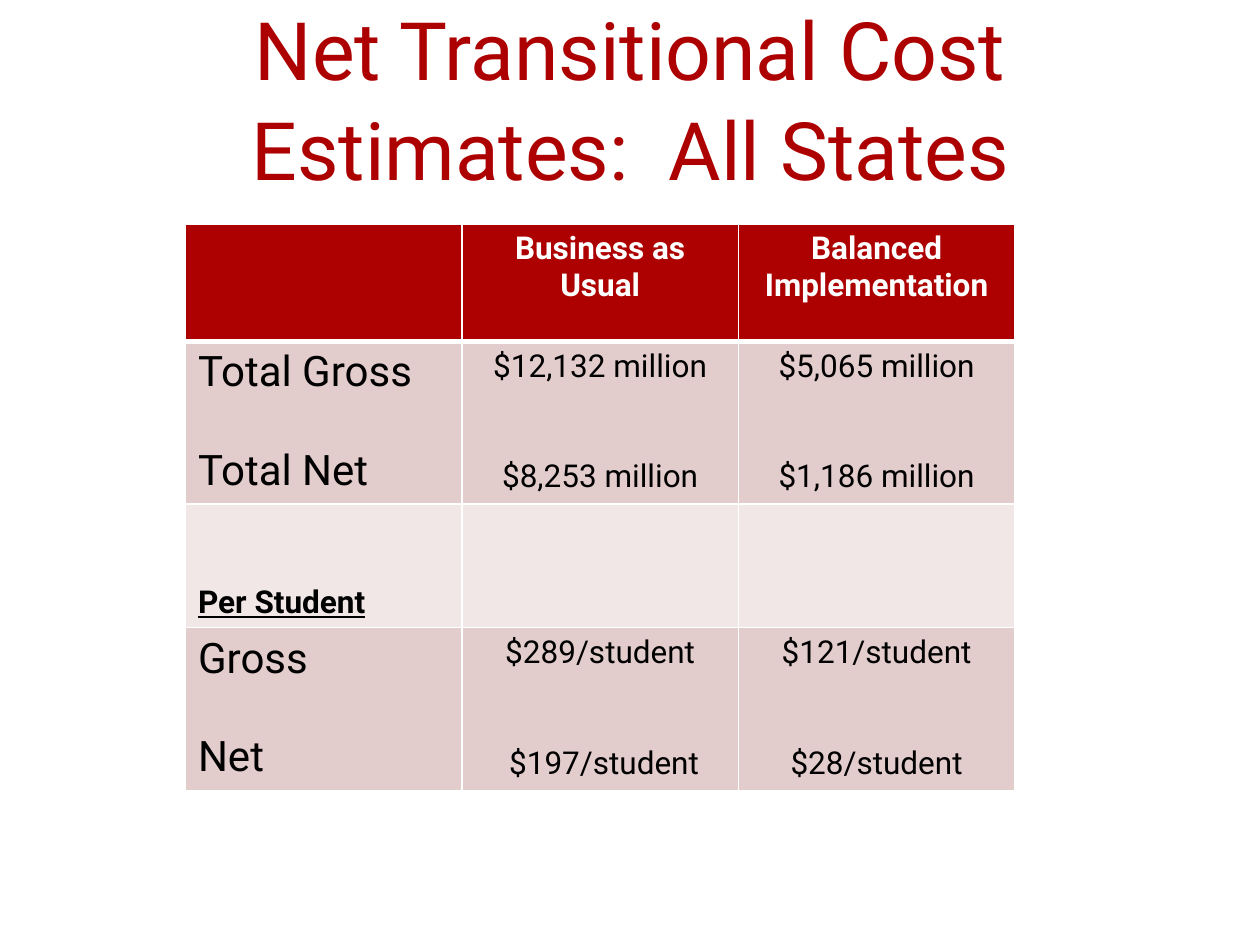
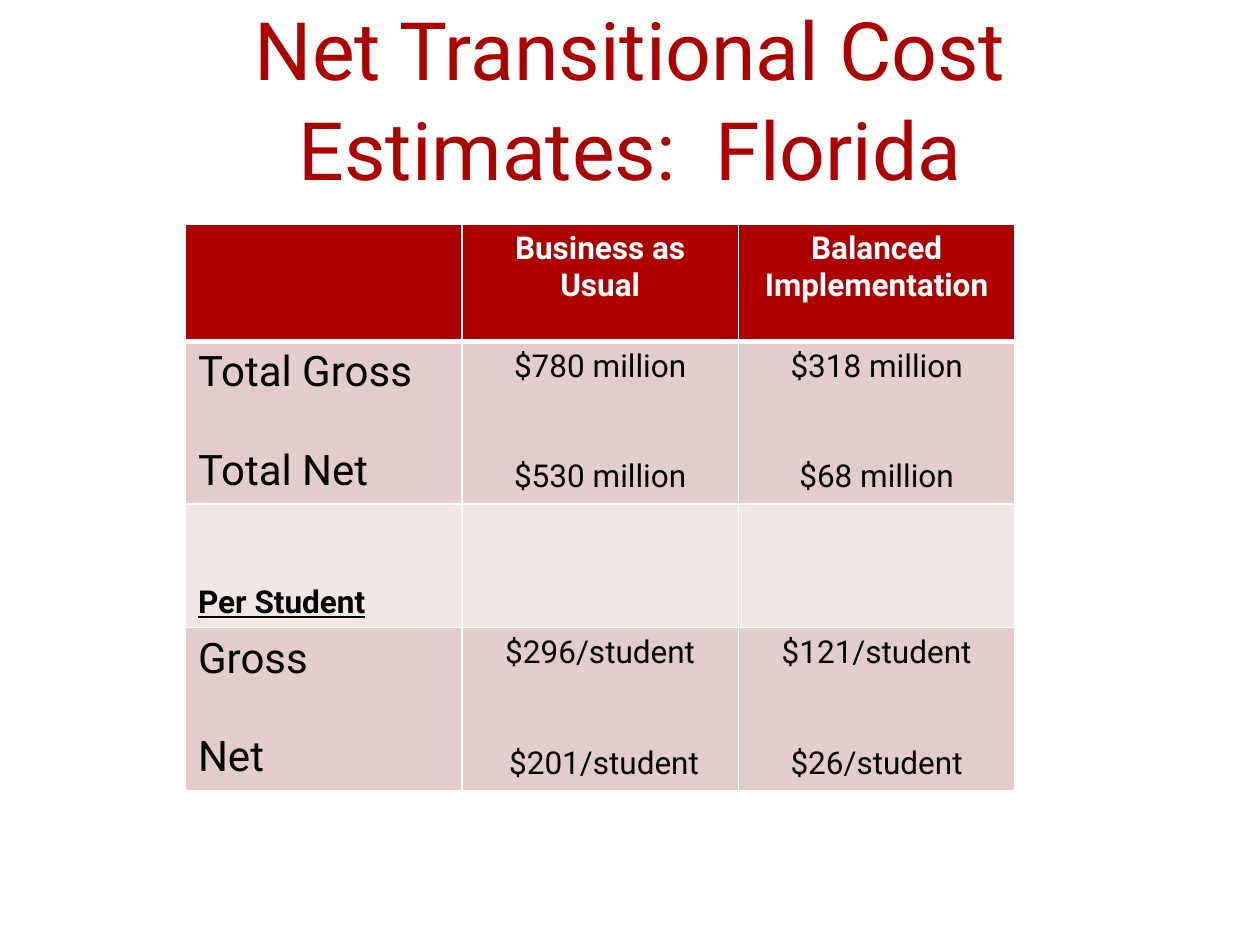
import pptx
import pptx.dml.color
import pptx.enum.text
import pptx.oxml
import pptx.oxml.ns
import pptx.util

Pt = pptx.util.Pt
Align = pptx.enum.text.PP_ALIGN
Anchor = pptx.enum.text.MSO_ANCHOR

FONT = "Roboto"
RED, ROSE, BLUSH = "AD0101", "E3CCCC", "F1E7E7"
WHITE, BLACK = "FFFFFF", "000000"
TITLE_BOX = (43.2, 8.6, 633.6, 105.2)
TABLE_BOX = (106, 128.2, 474, 320.8)
ROW_HEIGHTS = (67, 91.6, 70.6, 91.6)
ROW_FILLS = (RED, ROSE, BLUSH, ROSE)
HEADINGS = ("", "Business as Usual", "Balanced Implementation")
LABEL_SIZE, VALUE_SIZE = 24, 18
LABEL_GAP, VALUE_GAP = 28.1, 42.2

ESTIMATES = {
    "All States": (
        ("$12,132 million\n$8,253 million", "$5,065 million\n$1,186 million"),
        ("$289/student\n $197/student", "$121/student\n$28/student"),
    ),
    "Florida": (
        ("$780 million\n$530 million", "$318 million\n$68 million"),
        ("$296/student\n $201/student", "$121/student\n$26/student"),
    ),
}


def colour(code):
    """Return the colour for a hex string."""
    return pptx.dml.color.RGBColor.from_string(code)


def style_text(frame, size, code, align, gap=0, bold=False, underline=False):
    """Format every paragraph, with a gap before all but the first."""
    for index, para in enumerate(frame.paragraphs):
        para.alignment = align
        para.space_before = Pt(gap if index else 0)
        for span in para.runs:
            span.font.name = FONT
            span.font.size = Pt(size)
            span.font.color.rgb = colour(code)
            span.font.bold = bold
            span.font.underline = underline


def add_title(page, box, text):
    """Place the centred title, anchored to the bottom of its box."""
    frame = page.shapes.add_textbox(*map(Pt, box)).text_frame
    frame.word_wrap = True
    frame.vertical_anchor = Anchor.BOTTOM
    frame.margin_bottom = Pt(1.5)
    frame.text = text
    style_text(frame, 46, RED, Align.CENTER)
    frame.paragraphs[0].line_spacing = 1.03


def set_borders(cell, top, bottom):
    """Draw white borders, with the given top and bottom widths."""
    properties = cell._tc.get_or_add_tcPr()
    for side, width in (("L", 1), ("R", 1), ("T", top), ("B", bottom)):
        properties.append(pptx.oxml.parse_xml(
            f'<a:ln{side} {pptx.oxml.ns.nsdecls("a")} w="{Pt(width)}">'
            f'<a:solidFill><a:srgbClr val="{WHITE}"/></a:solidFill></a:ln{side}>'))


def style_cell(cell, row, column):
    """Give a cell the look of its row and column."""
    set_borders(cell, 3 if row == 1 else 1, 3 if row == 0 else 1)
    cell.fill.solid()
    cell.fill.fore_color.rgb = colour(ROW_FILLS[row])
    if row == 0:
        style_text(cell.text_frame, VALUE_SIZE, WHITE, Align.CENTER, bold=True)
    elif row == 2:
        cell.vertical_anchor = Anchor.BOTTOM
        style_text(cell.text_frame, VALUE_SIZE, BLACK, Align.LEFT, bold=True, underline=True)
    elif column == 0:
        style_text(cell.text_frame, LABEL_SIZE, BLACK, Align.LEFT, LABEL_GAP)
    else:
        style_text(cell.text_frame, VALUE_SIZE, BLACK, Align.CENTER, VALUE_GAP)


def add_cost_table(page, box, totals, per_student):
    """Place the table of total and per-student costs."""
    rows = (
        HEADINGS,
        ("Total Gross\nTotal Net", *totals),
        ("Per Student", "", ""),
        ("Gross\nNet", *per_student),
    )
    table = page.shapes.add_table(len(rows), len(HEADINGS), *map(Pt, box)).table
    table.horz_banding = False
    for column in table.columns:
        column.width = Pt(box[2] / len(HEADINGS))
    for row, texts in enumerate(rows):
        table.rows[row].height = Pt(ROW_HEIGHTS[row])
        for column, text in enumerate(texts):
            cell = table.cell(row, column)
            cell.text_frame.text = text
            style_cell(cell, row, column)


def main():
    """Build one slide of cost estimates for each place."""
    deck = pptx.Presentation()
    deck.slide_width, deck.slide_height = Pt(720), Pt(540)
    for place, (totals, per_student) in ESTIMATES.items():
        page = deck.slides.add_slide(deck.slide_layouts[6])
        add_title(page, TITLE_BOX, f"Net Transitional Cost Estimates:  {place}")
        add_cost_table(page, TABLE_BOX, totals, per_student)
    deck.save("out.pptx")


if __name__ == "__main__":
    main()
